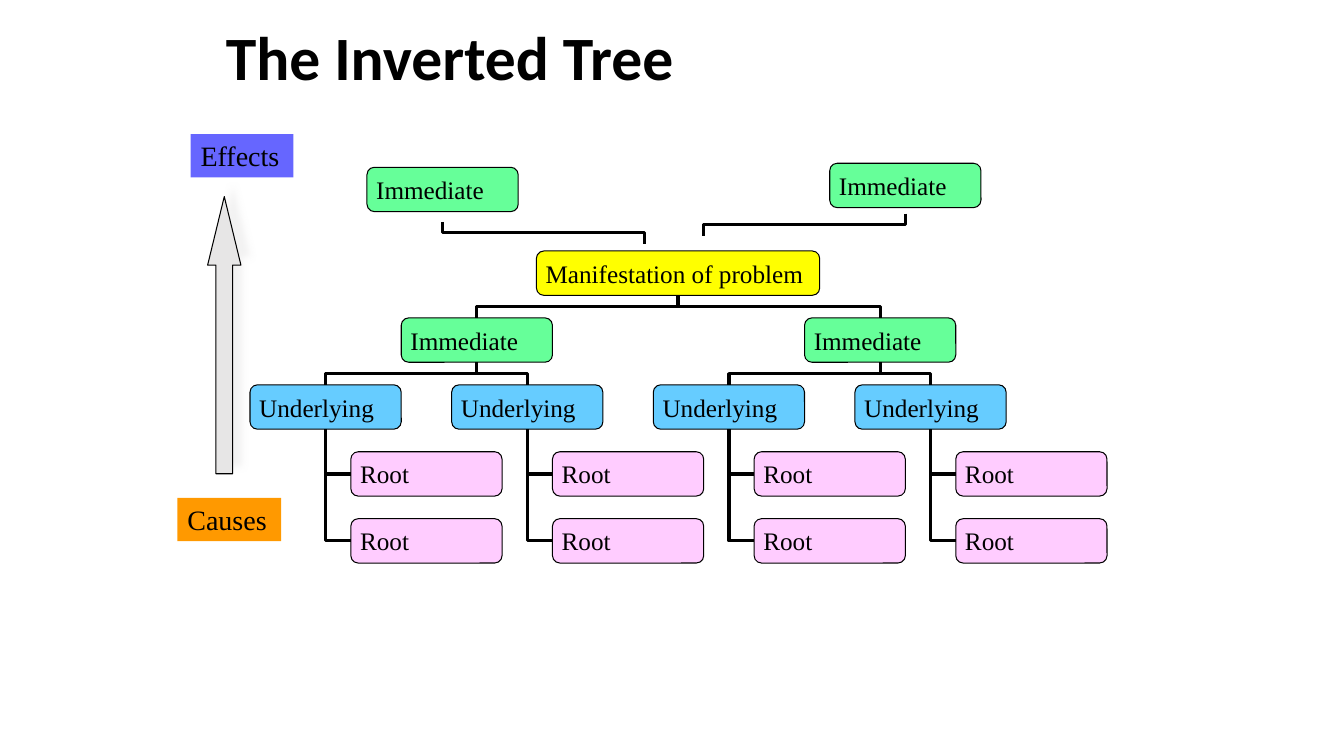
import pptx
import pptx.dml.color
import pptx.enum.shapes
import pptx.enum.text
import pptx.oxml.ns
import pptx.util
from lxml import etree

Inches = pptx.util.Inches
Pt = pptx.util.Pt
SHAPE = pptx.enum.shapes.MSO_SHAPE
ELBOW = pptx.enum.shapes.MSO_CONNECTOR.ELBOW
TOP, LEFT, BOTTOM = 0, 1, 2

GREEN, BLUE, PINK, YELLOW = "66FF99", "66CCFF", "FFCCFF", "FFFF00"
NODE_WIDE, NODE_HIGH = 1.5, 0.44
ROW_TOP, ROW_STEP = 2.49, 0.664


def color(text):
    return pptx.dml.color.RGBColor.from_string(text)


def write(shape, text, size=18, font="Times New Roman", bold=False,
          wrap=False, inset=(0.1, 0.05), spacing=None):
    frame = shape.text_frame
    frame.text = text
    frame.word_wrap = wrap
    frame.auto_size = pptx.enum.text.MSO_AUTO_SIZE.NONE
    frame.vertical_anchor = pptx.enum.text.MSO_ANCHOR.MIDDLE
    frame.margin_left = frame.margin_right = Inches(inset[0])
    frame.margin_top = frame.margin_bottom = Inches(inset[1])
    line = frame.paragraphs[0]
    line.alignment = pptx.enum.text.PP_ALIGN.LEFT
    line.line_spacing = spacing
    style = line.runs[0].font
    style.name, style.size, style.bold = font, Pt(size), bold
    style.color.rgb = color("000000")


def block(slide, kind, left, top, width, height, fill, edge=True):
    shape = slide.shapes.add_shape(
        kind, Inches(left), Inches(top), Inches(width), Inches(height))
    shape.shadow.inherit = False
    shape.fill.solid()
    shape.fill.fore_color.rgb = color(fill)
    if edge:
        shape.line.color.rgb = color("000000")
        shape.line.width = Pt(0.75)
    else:
        shape.line.fill.background()
    return shape


def node(slide, text, left, top, fill, width=NODE_WIDE):
    shape = block(slide, SHAPE.ROUNDED_RECTANGLE, left, top, width,
                  NODE_HIGH, fill)
    write(shape, text, inset=(0.07, 0.04))
    return shape


def label(slide, text, left, top, width, fill):
    shape = block(slide, SHAPE.RECTANGLE, left, top, width, 0.43, fill,
                  edge=False)
    write(shape, text, size=20)


def elbow(slide, start, end):
    line = slide.shapes.add_connector(ELBOW, *start, *end)
    line.line.color.rgb = color("000000")
    line.line.width = Pt(2.25)
    props = line._element.spPr
    etree.SubElement(props, pptx.oxml.ns.qn("a:effectLst"))
    return line


def drop(slide, start, end, upper=None, lower=None):
    line = elbow(slide, start, end)
    if upper is not None:
        line.begin_connect(upper, BOTTOM)
        line.end_connect(lower, TOP)
    across, down = abs(end[0] - start[0]), end[1] - start[1]
    line.left = (start[0] + end[0] - down) // 2
    line.top = (start[1] + end[1] - across) // 2
    line.width, line.height = down, across
    frame = line._element.spPr.xfrm
    frame.rot, frame.flipH, frame.flipV = 90, False, end[0] > start[0]


def branch(slide, upper, lower):
    start = (upper.left + upper.width // 2, upper.top + upper.height)
    end = (lower.left + lower.width // 2, lower.top)
    drop(slide, start, end, upper, lower)


def hang(slide, upper, root):
    start = (root.left, root.top + root.height // 2)
    end = (upper.left + upper.width // 2, upper.top + upper.height)
    line = elbow(slide, start, end)
    line.begin_connect(root, LEFT)
    line.end_connect(upper, BOTTOM)
    props = line._element.spPr
    props.find(pptx.oxml.ns.qn("a:prstGeom")).set("prst", "bentConnector2")
    frame = props.xfrm
    frame.rot, frame.flipH, frame.flipV = 180, False, False


def tree(slide):
    rows = [ROW_TOP + ROW_STEP * i for i in range(5)]
    trunk = node(slide, "Manifestation of problem", 5.32, rows[0], YELLOW,
                 width=2.81)
    for side in range(2):
        near = node(slide, "Immediate", 3.98 + 4 * side, rows[1], GREEN)
        branch(slide, trunk, near)
        for half in range(2):
            left = 2.48 + 4 * side + 2 * half
            under = node(slide, "Underlying", left, rows[2], BLUE)
            branch(slide, near, under)
            for top in rows[3:]:
                root = node(slide, "Root", left + 1, top, PINK)
                hang(slide, under, root)


def effects(slide):
    for left, top, start, end in (
            (8.23, 1.62, (8.98, 2.12), (6.98, 2.34)),
            (3.64, 1.66, (4.39, 2.2), (6.39, 2.42))):
        drop(slide, [Inches(n) for n in start], [Inches(n) for n in end])
        node(slide, "Immediate", left, top, GREEN)


def arrow(slide):
    shape = block(slide, SHAPE.UP_ARROW, 2.06, 1.95, 0.33, 2.75, "E7E6E6")
    shape.adjustments[0] = 0.5
    shape.adjustments[1] = 2.06
    qn = pptx.oxml.ns.qn
    glow = shape._element.spPr.find(qn("a:effectLst"))
    shade = etree.SubElement(
        glow, qn("a:outerShdw"), blurRad=str(Pt(5)), dist=str(Pt(8.5)),
        dir=str(315 * 60000), algn="ctr", rotWithShape="0")
    tint = etree.SubElement(shade, qn("a:srgbClr"), val="E7E6E6")
    etree.SubElement(tint, qn("a:alpha"), val="50000")


def main():
    deck = pptx.Presentation()
    deck.slide_width, deck.slide_height = Inches(13.33), Inches(7.5)
    slide = deck.slides.add_slide(deck.slide_layouts[5])
    title = slide.shapes.title
    title.left, title.top = Inches(2.14), Inches(-0.02)
    title.width, title.height = Inches(9), Inches(1.25)
    write(title, "The Inverted Tree", size=44, font="Calibri", bold=True,
          wrap=True, spacing=0.9)
    tree(slide)
    label(slide, "Causes", 1.76, 4.94, 1.03, "FF9900")
    label(slide, "Effects", 1.89, 1.33, 1.02, "6666FF")
    arrow(slide)
    effects(slide)
    deck.save("out.pptx")


if __name__ == "__main__":
    main()
